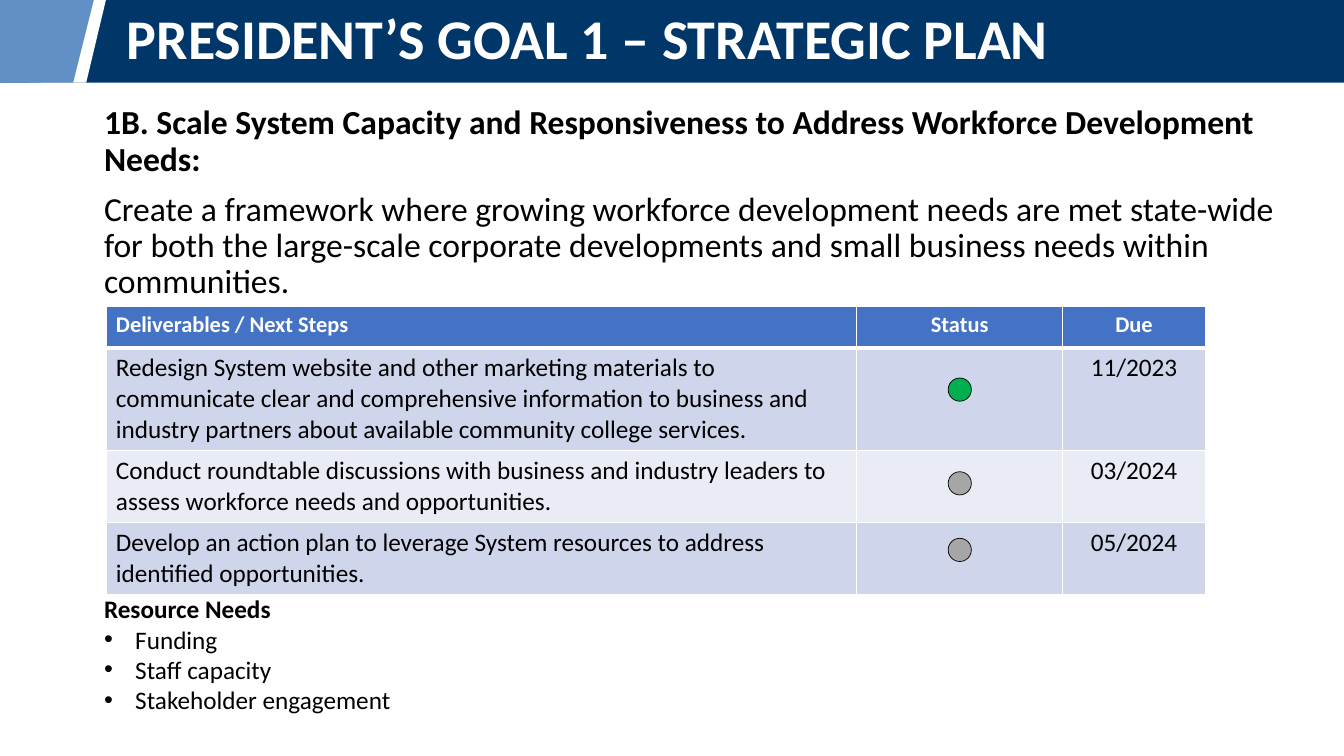
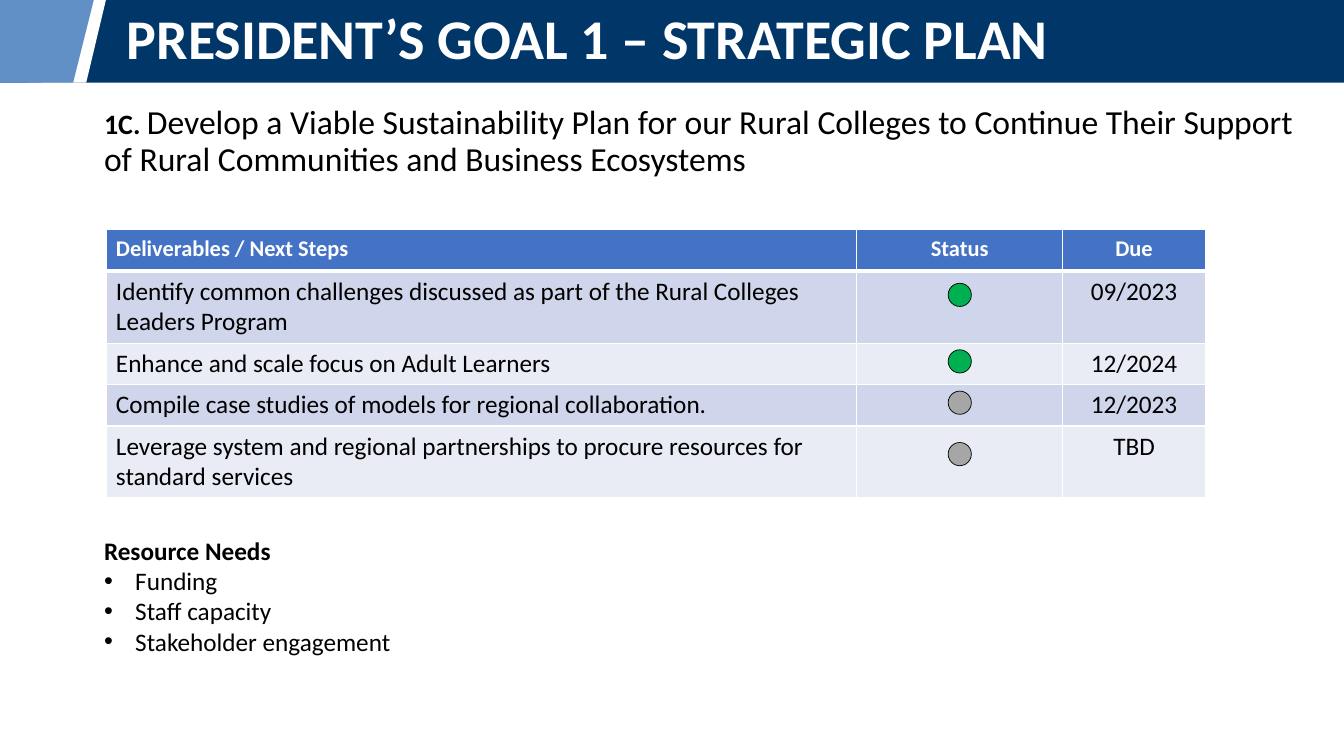
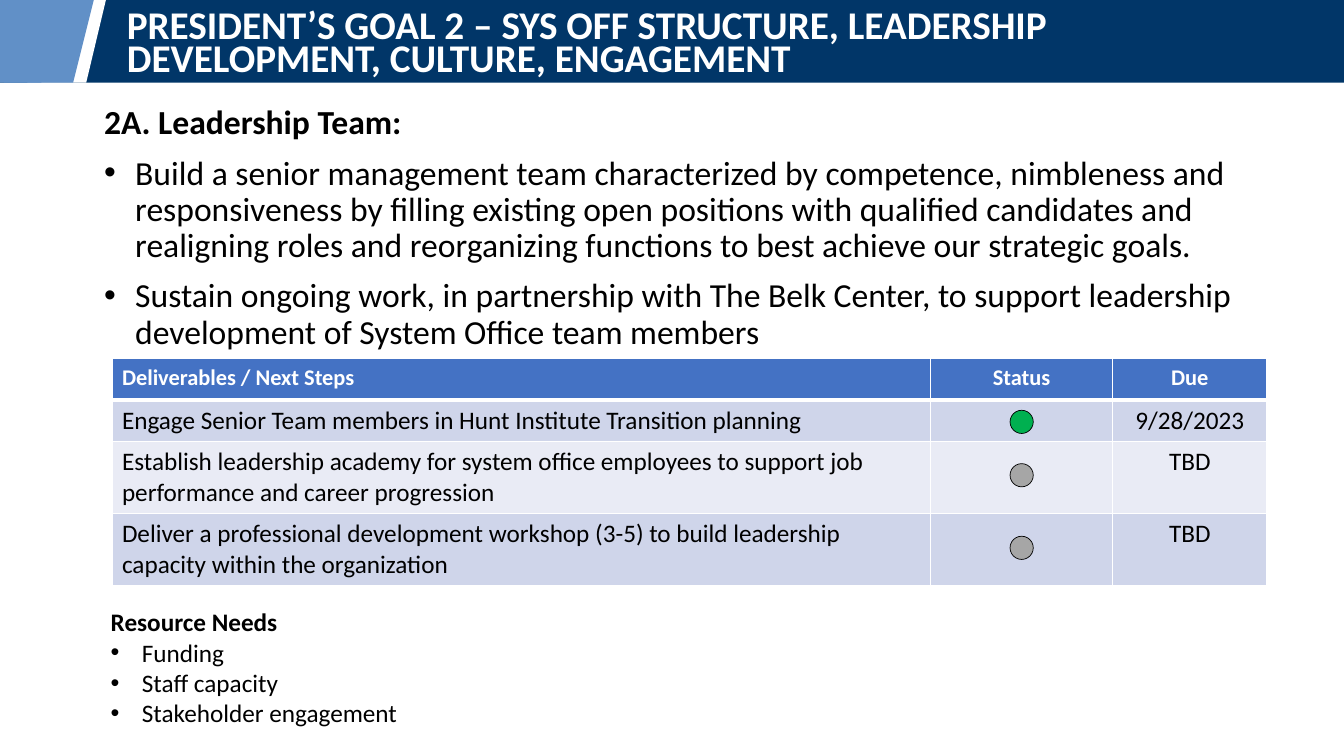
from dataclasses import dataclass

from lxml import etree
from pptx import Presentation
from pptx.dml.color import RGBColor
from pptx.enum.shapes import MSO_SHAPE
from pptx.enum.text import MSO_ANCHOR, PP_ALIGN
from pptx.oxml.ns import qn
from pptx.util import Inches, Pt

RECT, OVAL = MSO_SHAPE.RECTANGLE, MSO_SHAPE.OVAL
SLANTED = MSO_SHAPE.PARALLELOGRAM
LEFT, CENTER = PP_ALIGN.LEFT, PP_ALIGN.CENTER
MIDDLE, TOP = MSO_ANCHOR.MIDDLE, MSO_ANCHOR.TOP
WIDTH, HEIGHT = Inches(13.33), Inches(7.5)


@dataclass(frozen=True)
class Theme:
    font: str = "Calibri"
    navy: str = "013668"
    sky: str = "6190C7"
    white: str = "FFFFFF"
    black: str = "000000"
    header: str = "4472C4"
    bands: tuple = ("CFD5EA", "E9EBF5")
    done: str = "00B050"
    pending: str = "A6A6A6"
    title: int = 40
    long_title: int = 28
    body: int = 24
    lead: int = 20
    table: int = 18
    table_head: int = 16


T = Theme()

# Lengths are percentages of the slide's width (x) or height (y).
BAND_H = 10.93
BODY_LEFT, BODY_TOP, BODY_W = 7, 13.33, 91
ROW_H, LINE_H = 5.47, 4.07
DOT = 3.07
HEADINGS = ("Deliverables / Next Steps", "Status", "Due")
RESOURCES = ("Funding", "Staff capacity", "Stakeholder engagement")


def x(share):
    return round(WIDTH * share / 100)


def y(share):
    return round(HEIGHT * share / 100)


def rgb(color):
    return RGBColor.from_string(color)


def write(tf, text, size=T.body, bold=False, color=T.black, align=LEFT,
          bullet=False, spacing=None, before=None, same_line=False):
    """Add text as a new paragraph, or as a further run of the last one."""
    p = tf.paragraphs[-1]
    if p.runs and not same_line:
        p = tf.add_paragraph()
    if not same_line:
        p.alignment = align
        if spacing:
            p.line_spacing = spacing
        if before:
            p.space_before = Pt(before)
        if bullet:
            pPr = p._p.get_or_add_pPr()
            pPr.set("marL", str(Inches(0.31)))
            pPr.set("indent", str(-Inches(0.31)))
            etree.SubElement(pPr, qn("a:buFont"), typeface="Arial")
            etree.SubElement(pPr, qn("a:buChar"), char="•")
    r = p.add_run()
    r.text = text
    r.font.name, r.font.size, r.font.bold = T.font, Pt(size), bold
    r.font.color.rgb = rgb(color)


def text_box(s, left, top, width, height, anchor=TOP):
    tf = s.shapes.add_textbox(x(left), y(top), x(width), y(height)).text_frame
    tf.word_wrap = True
    tf.vertical_anchor = anchor
    return tf


def shape(shapes, kind, left, top, width, height, fill):
    """Draw a plain filled shape; the box is given in EMU."""
    sp = shapes.add_shape(kind, left, top, width, height)
    sp.shadow.inherit = False
    sp.fill.solid()
    sp.fill.fore_color.rgb = rgb(fill)
    sp.line.fill.background()
    return sp


def title_band(s, title, size=T.title, spacing=0.9, top=0):
    shape(s.shapes, RECT, 0, 0, WIDTH, y(BAND_H), T.navy)
    tf = text_box(s, 8.7, top, 89.3, BAND_H, MIDDLE)
    write(tf, title, size=size, bold=True, color=T.white, spacing=spacing)
    corner = s.shapes.add_group_shape().shapes
    for kind, left, width, fill in ((SLANTED, 2.03, 5.85, T.white),
                                    (SLANTED, 0.3, 6.68, T.sky),
                                    (RECT, 0, 3.08, T.sky)):
        shape(corner, kind, x(left), 0, x(width), y(BAND_H), fill)


def border(cell, side, points):
    ln = etree.SubElement(cell._tc.get_or_add_tcPr(), qn("a:ln" + side),
                          w=str(Pt(points)))
    fill = etree.SubElement(ln, qn("a:solidFill"))
    etree.SubElement(fill, qn("a:srgbClr"), val=T.white)


def style_cell(cell, row, fill):
    heavy = {(0, "B"), (1, "T")}
    for side in "LRTB":
        border(cell, side, 3 if (row, side) in heavy else 1)
    cell.fill.solid()
    cell.fill.fore_color.rgb = rgb(fill)


def status_table(s, left, top, cols, steps):
    """Steps are (text, lines, due, status colour, top of the status dot)."""
    heights = [ROW_H] + [ROW_H + LINE_H * (step[1] - 1) for step in steps]
    table = s.shapes.add_table(len(heights), len(cols), x(left), y(top),
                               x(sum(cols)), y(sum(heights))).table
    for column, width in zip(table.columns, cols):
        column.width = x(width)
    for row, height in zip(table.rows, heights):
        row.height = y(height)

    contents = [HEADINGS] + [(text, "", due) for text, _, due, _, _ in steps]
    for i, texts in enumerate(contents):
        fill = T.bands[(i - 1) % 2] if i else T.header
        look = (dict(size=T.table) if i else
                dict(size=T.table_head, bold=True, color=T.white))
        for j, text in enumerate(texts):
            cell = table.cell(i, j)
            style_cell(cell, i, fill)
            if text:
                write(cell.text_frame, text, align=CENTER if j else LEFT, **look)

    dot_left = x(left + cols[0] + cols[1] / 2) - y(DOT) // 2
    for *_, color, dot_top in steps:
        dot = shape(s.shapes, OVAL, dot_left, y(dot_top), y(DOT), y(DOT), color)
        dot.line.color.rgb = rgb(T.black)
        dot.line.width = Pt(0.5)


def resource_needs(s, top, left=BODY_LEFT):
    tf = text_box(s, left, top, 82.5, 17.5)
    write(tf, "Resource Needs", size=T.table, bold=True)
    for need in RESOURCES:
        write(tf, need, size=T.table, bullet=True)


def body_box(s, height):
    return text_box(s, BODY_LEFT, BODY_TOP, BODY_W, height)


def workforce_slide(s):
    tf = body_box(s, 26)
    write(tf, "1B. Scale System Capacity and Responsiveness to Address Workforce "
          "Development Needs:", bold=True, spacing=0.9)
    write(tf, "Create a framework where growing workforce development needs are met "
          "state-wide for both the large-scale corporate developments and small "
          "business needs within communities.", spacing=0.9, before=10)
    title_band(s, "PRESIDENT’S GOAL 1 – STRATEGIC PLAN")
    status_table(s, 7.88, 40.53, (55.88, 15.3, 10.65), [
        ("Redesign System website and other marketing materials to communicate "
         "clear and comprehensive information to business and industry partners "
         "about available community college services.", 3, "11/2023", T.done, 50),
        ("Conduct roundtable discussions with business and industry leaders to "
         "assess workforce needs and opportunities.", 2, "03/2024", T.pending, 62.4),
        ("Develop an action plan to leverage System resources to address "
         "identified opportunities.", 2, "05/2024", T.pending, 71.2),
    ])
    resource_needs(s, 77.87)


def rural_slide(s):
    tf = body_box(s, 14)
    write(tf, "1C. ", size=T.lead, bold=True, spacing=0.9)
    write(tf, "Develop a Viable Sustainability Plan for our Rural Colleges to "
          "Continue Their Support of Rural Communities and Business Ecosystems",
          same_line=True)
    title_band(s, "PRESIDENT’S GOAL 1 – STRATEGIC PLAN")
    status_table(s, 7.88, 30.4, (55.88, 15.3, 10.65), [
        ("Identify common challenges discussed as part of the Rural Colleges "
         "Leaders Program", 2, "09/2023", T.done, 37.47),
        ("Enhance and scale focus on Adult Learners", 1, "12/2024", T.done, 46.27),
        ("Compile case studies of models for regional collaboration.", 1,
         "12/2023", T.pending, 51.73),
        ("Leverage system and regional partnerships to procure resources for "
         "standard services", 2, "TBD", T.pending, 58.53),
    ])
    resource_needs(s, 70.13)


def leadership_slide(s):
    tf = body_box(s, 31.33)
    write(tf, "2A. Leadership Team:", bold=True, spacing=0.9)
    for goal in (
            "Build a senior management team characterized by competence, nimbleness "
            "and responsiveness by filling existing open positions with qualified "
            "candidates and realigning roles and reorganizing functions to best "
            "achieve our strategic goals.",
            "Sustain ongoing work, in partnership with The Belk Center, to support "
            "leadership development of System Office team members"):
        write(tf, goal, bullet=True, spacing=0.9, before=10)
    title_band(s, "PRESIDENT’S GOAL 2 – SYS OFF STRUCTURE, LEADERSHIP DEVELOPMENT, "
               "CULTURE, ENGAGEMENT", size=T.long_title, spacing=0.7, top=0.67)
    status_table(s, 8.33, 47.47, (60.9, 13.57, 11.47), [
        ("Engage Senior Team members in Hunt Institute Transition planning", 1,
         "9/28/2023", T.done, 54.27),
        ("Establish leadership academy for system office employees to support job "
         "performance and career progression", 2, "TBD", T.pending, 61.33),
        ("Deliver a professional development workshop (3-5) to build leadership "
         "capacity within the organization", 2, "TBD", T.pending, 70.93),
    ])
    resource_needs(s, 79.6, left=7.5)


def main():
    prs = Presentation()
    prs.slide_width, prs.slide_height = WIDTH, HEIGHT
    blank = prs.slide_layouts[6]
    for build in (workforce_slide, rural_slide, leadership_slide):
        build(prs.slides.add_slide(blank))
    prs.save("out.pptx")


if __name__ == "__main__":
    main()
